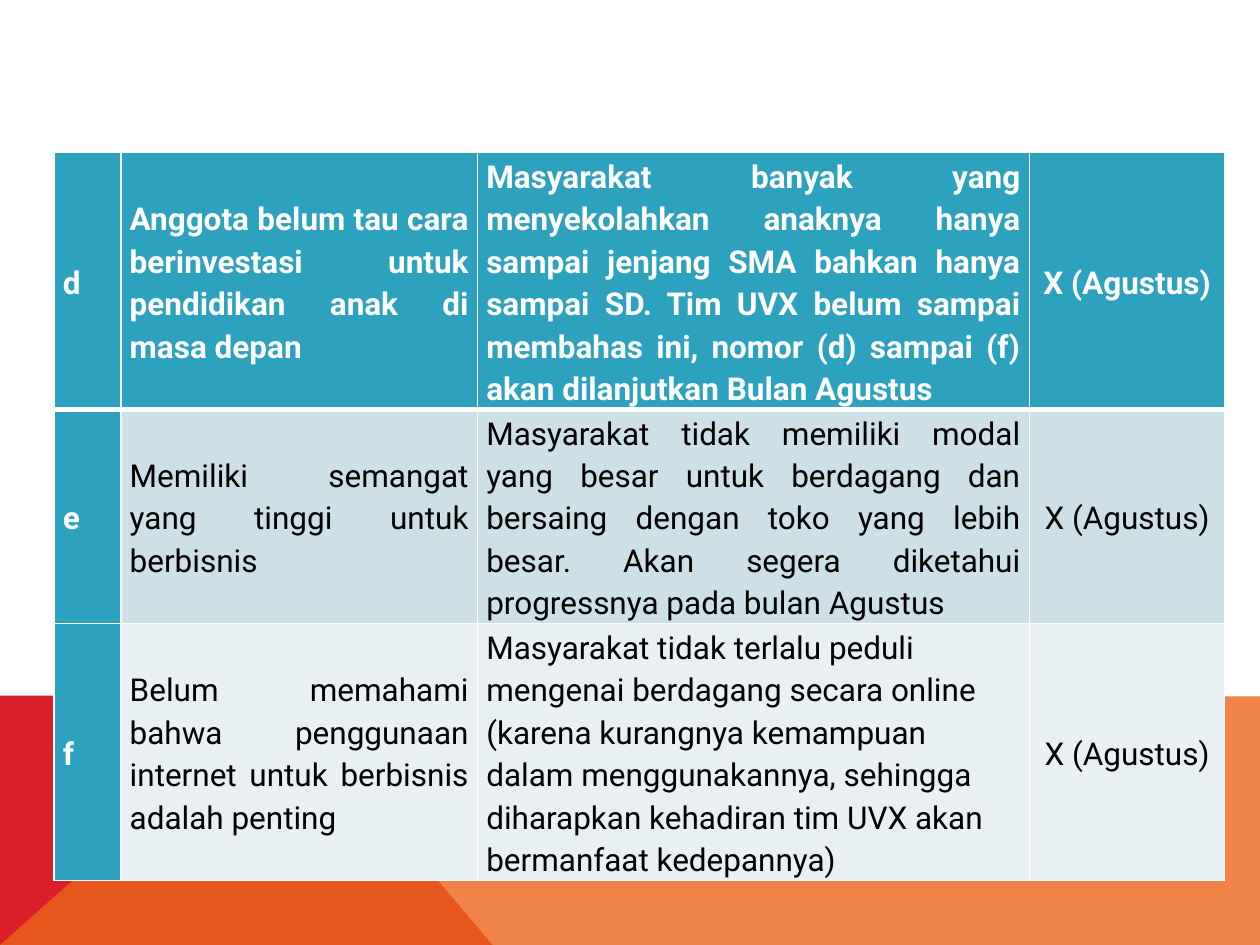
from lxml import etree
from pptx import Presentation
from pptx.dml.color import RGBColor
from pptx.enum.text import MSO_ANCHOR, PP_ALIGN
from pptx.oxml.ns import qn
from pptx.util import Inches, Pt

WHITE = RGBColor(0xFF, 0xFF, 0xFF)
BLACK = RGBColor(0x00, 0x00, 0x00)
RED = RGBColor(0xDA, 0x1F, 0x28)
ORANGE = RGBColor(0xEB, 0x64, 0x1B)
TEAL = RGBColor(0x2D, 0xA2, 0xBF)
BAND_DARK = RGBColor(0xCD, 0xE0, 0xE8)
BAND_LIGHT = RGBColor(0xE8, 0xF0, 0xF4)

LEFT, CENTER, JUSTIFY = PP_ALIGN.LEFT, PP_ALIGN.CENTER, PP_ALIGN.JUSTIFY
MIDDLE = MSO_ANCHOR.MIDDLE

COL_WIDTHS = [5.3, 28.3, 43.8, 15.5]
ROW_HEIGHTS = [27.2, 22.67, 27.2]
ROWS = [
    ("d",
     "Anggota belum tau cara berinvestasi untuk pendidikan anak di masa depan",
     "Masyarakat banyak yang menyekolahkan anaknya hanya sampai jenjang SMA "
     "bahkan hanya sampai SD. Tim UVX belum sampai membahas ini, nomor (d) "
     "sampai (f) akan dilanjutkan Bulan Agustus",
     "X (Agustus)"),
    ("e",
     "Memiliki semangat yang tinggi untuk berbisnis",
     "Masyarakat tidak memiliki modal yang besar untuk berdagang dan bersaing "
     "dengan toko yang lebih besar. Akan segera diketahui progressnya pada "
     "bulan Agustus",
     "X (Agustus)"),
    ("f",
     "Belum memahami bahwa penggunaan internet untuk berbisnis adalah penting",
     "Masyarakat tidak terlalu peduli mengenai berdagang secara online (karena "
     "kurangnya kemampuan dalam menggunakannya, sehingga diharapkan kehadiran "
     "tim UVX akan bermanfaat kedepannya)",
     "X (Agustus)"),
]


def write(tf, text, *, font, size, color, bold=False, align=LEFT, spacing=1.0):
    p = tf.paragraphs[0]
    p.alignment = align
    p.line_spacing = spacing
    r = p.add_run()
    r.text = text
    r.font.name = font
    r.font.size = Pt(size)
    r.font.bold = bold
    r.font.color.rgb = color


class Deck:
    font = "Roboto"
    size = 18
    spacing = 1.15
    bands = [TEAL, BAND_DARK, BAND_LIGHT]

    def __init__(self, width, height):
        self.prs = Presentation()
        self.prs.slide_width = Inches(width)
        self.prs.slide_height = Inches(height)
        self.s = None

    def x(self, percent):
        return round(self.prs.slide_width * percent / 100)

    def y(self, percent):
        return round(self.prs.slide_height * percent / 100)

    def slide(self):
        self.s = self.prs.slides.add_slide(self.prs.slide_layouts[6])

    def polygon(self, points, color, opacity=100):
        start, *rest = [(self.x(px), self.y(py)) for px, py in points]
        builder = self.s.shapes.build_freeform(*start, scale=1.0)
        builder.add_line_segments(rest, close=True)
        sp = builder.convert_to_shape()
        sp.shadow.inherit = False
        sp.fill.solid()
        sp.fill.fore_color.rgb = color
        sp.line.fill.background()
        if opacity < 100:
            clr = sp.fill._xPr.find(qn("a:solidFill"))[0]
            etree.SubElement(clr, qn("a:alpha"), val=str(opacity * 1000))

    def border(self, cell, side, width):
        ln = etree.SubElement(cell._tc.get_or_add_tcPr(), qn("a:ln" + side),
                              w=str(Pt(width)))
        fill = etree.SubElement(ln, qn("a:solidFill"))
        etree.SubElement(fill, qn("a:srgbClr"), val=str(WHITE))

    def cell(self, cell, text, row, col):
        heading = row == 0 or col == 0
        cell.margin_left = cell.margin_right = Inches(0.07)
        cell.margin_top = cell.margin_bottom = 0
        cell.vertical_anchor = MIDDLE
        widths = {"L": 1, "R": 1, "T": 3 if row == 1 else 1,
                  "B": 3 if row == 0 else 1}
        for side, width in widths.items():
            self.border(cell, side, width)
        cell.fill.solid()
        cell.fill.fore_color.rgb = TEAL if heading else self.bands[row]
        align = {(2, 2): LEFT}.get((row, col), CENTER if col == 3 else JUSTIFY)
        write(cell.text_frame, text, font=self.font, size=self.size,
              color=WHITE if heading else BLACK, bold=heading,
              align=align, spacing=self.spacing)

    def table(self, left, top, col_widths, row_heights, rows):
        table = self.s.shapes.add_table(
            len(rows), len(col_widths), self.x(left), self.y(top),
            self.x(sum(col_widths)), self.y(sum(row_heights))).table
        for column, width in zip(table.columns, col_widths):
            column.width = self.x(width)
        for row, height in zip(table.rows, row_heights):
            row.height = self.y(height)
        for i, texts in enumerate(rows):
            for j, text in enumerate(texts):
                self.cell(table.cell(i, j), text, i, j)


def main():
    deck = Deck(10, 7.5)
    deck.slide()
    deck.polygon([(0, 100), (0, 73.6), (22.3, 73.6), (39.1, 100)], RED)
    deck.polygon([(0, 100), (22.3, 73.6), (100, 73.7), (100, 100)], ORANGE, 80)
    deck.table(4.3, 16.13, COL_WIDTHS, ROW_HEIGHTS, ROWS)
    deck.prs.save("out.pptx")


if __name__ == "__main__":
    main()
